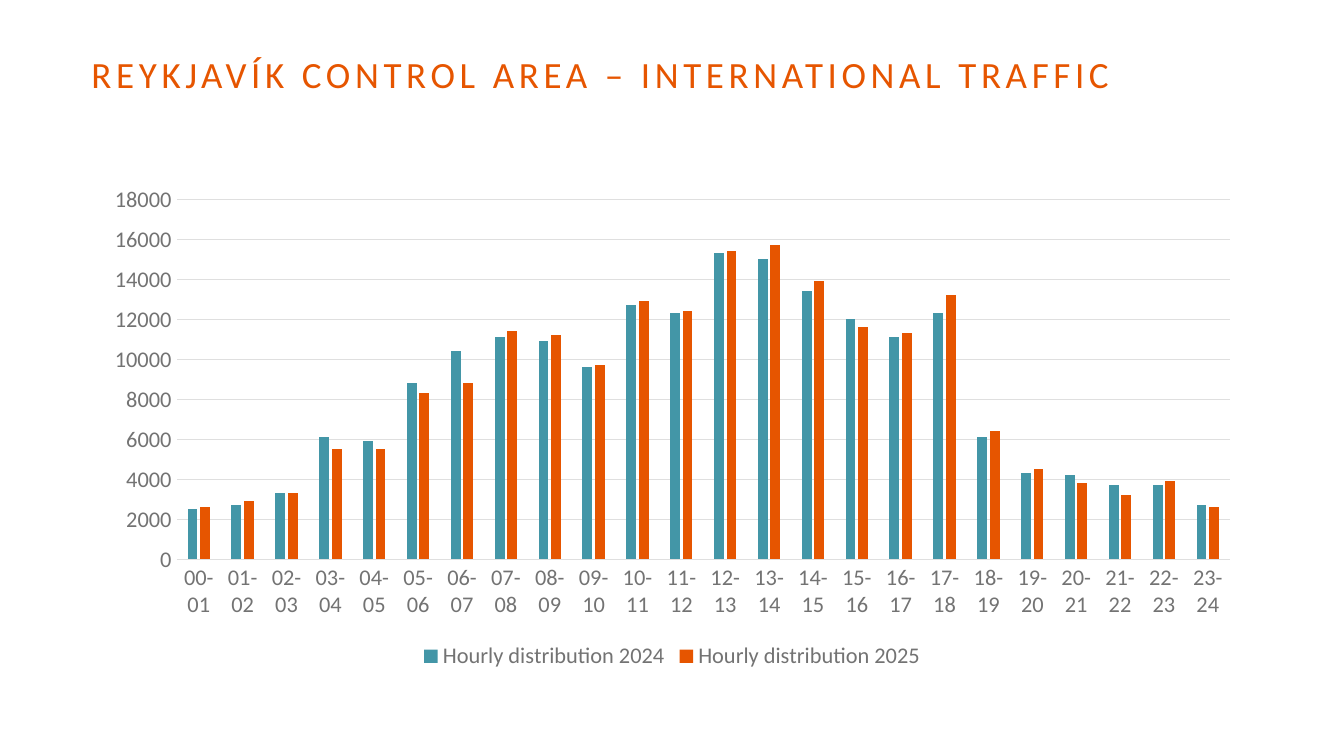
from pptx import Presentation
from pptx.chart.data import CategoryChartData
from pptx.dml.color import RGBColor
from pptx.enum.chart import XL_CHART_TYPE, XL_LEGEND_POSITION, XL_TICK_MARK
from pptx.enum.text import MSO_ANCHOR
from pptx.util import Cm, Pt

CLUSTERED = XL_CHART_TYPE.COLUMN_CLUSTERED
BOTTOM = XL_LEGEND_POSITION.BOTTOM
NO_TICKS = XL_TICK_MARK.NONE
MIDDLE = MSO_ANCHOR.MIDDLE

TRAFFIC_2024 = [
    2500, 2700, 3300, 6100, 5900, 8800, 10400, 11100,
    10900, 9600, 12700, 12300, 15300, 15000, 13400, 12000,
    11100, 12300, 6100, 4300, 4200, 3700, 3700, 2700,
]
TRAFFIC_2025 = [
    2600, 2900, 3300, 5500, 5500, 8300, 8800, 11400,
    11200, 9700, 12900, 12400, 15400, 15700, 13900, 11600,
    11300, 13200, 6400, 4500, 3800, 3200, 3900, 2600,
]


def color(hex_string):
    return RGBColor.from_string(hex_string)


class SlideBuilder:
    font_name = "Calibri"
    accent = "E65500"
    teal = "4396A7"
    grey = "737373"
    grid = "DFDFDF"

    def __init__(self, slide):
        self.slide = slide

    def style_font(self, font, size, hex_string):
        font.name = self.font_name
        font.size = Pt(size)
        font.color.rgb = color(hex_string)

    def style_line(self, line):
        line.color.rgb = color(self.grid)
        line.width = Pt(0.75)

    def title(self, text, left, top, width, height):
        box = self.slide.shapes.add_textbox(Cm(left), Cm(top), Cm(width), Cm(height))
        frame = box.text_frame
        frame.word_wrap = True
        frame.vertical_anchor = MIDDLE
        frame.margin_left = frame.margin_right = 0
        frame.margin_top = frame.margin_bottom = 0
        paragraph = frame.paragraphs[0]
        paragraph.line_spacing = Pt(26)
        run = paragraph.add_run()
        run.text = text
        self.style_font(paragraph.font, 19.8, self.accent)
        # Letter spacing in hundredths of a point
        run._r.get_or_add_rPr().set("spc", "250")

    def column_chart(self, categories, series, left, top, width, height):
        """Draw clustered columns; series holds (name, values, colour) tuples."""
        data = CategoryChartData()
        data.categories = categories
        for name, values, _ in series:
            data.add_series(name, values)
        chart = self.slide.shapes.add_chart(
            CLUSTERED, Cm(left), Cm(top), Cm(width), Cm(height), data
        ).chart
        chart.has_title = False
        self.style_font(chart.font, 10, "272727")

        plot = chart.plots[0]
        plot.gap_width = 219
        plot.overlap = -27
        plot.vary_by_categories = False
        for column, (_, _, fill) in zip(plot.series, series):
            column.format.fill.solid()
            column.format.fill.fore_color.rgb = color(fill)
            column.invert_if_negative = False

        for axis in (chart.category_axis, chart.value_axis):
            axis.major_tick_mark = axis.minor_tick_mark = NO_TICKS
            self.style_font(axis.tick_labels.font, 12, self.grey)
        self.style_line(chart.category_axis.format.line)
        value_axis = chart.value_axis
        value_axis.minimum_scale = 0
        value_axis.maximum_scale = 18000
        value_axis.major_unit = 2000
        value_axis.format.line.fill.background()
        self.style_line(value_axis.major_gridlines.format.line)

        chart.has_legend = True
        chart.legend.position = BOTTOM
        chart.legend.include_in_layout = False
        self.style_font(chart.legend.font, 12, self.grey)


def main():
    presentation = Presentation()
    presentation.slide_width = Cm(25.4)
    presentation.slide_height = Cm(14.28)
    builder = SlideBuilder(presentation.slides.add_slide(presentation.slide_layouts[6]))

    builder.title(
        "REYKJAVÍK CONTROL AREA – INTERNATIONAL TRAFFIC", 1.73, 0.51, 20.55, 1.7
    )
    hours = [f"{hour:02d}-{hour + 1:02d}" for hour in range(24)]
    series = [
        ("Hourly distribution 2024", TRAFFIC_2024, builder.teal),
        ("Hourly distribution 2025", TRAFFIC_2025, builder.accent),
    ]
    builder.column_chart(hours, series, 1.73, 3.33, 21.95, 9.42)
    presentation.save("out.pptx")


if __name__ == "__main__":
    main()
